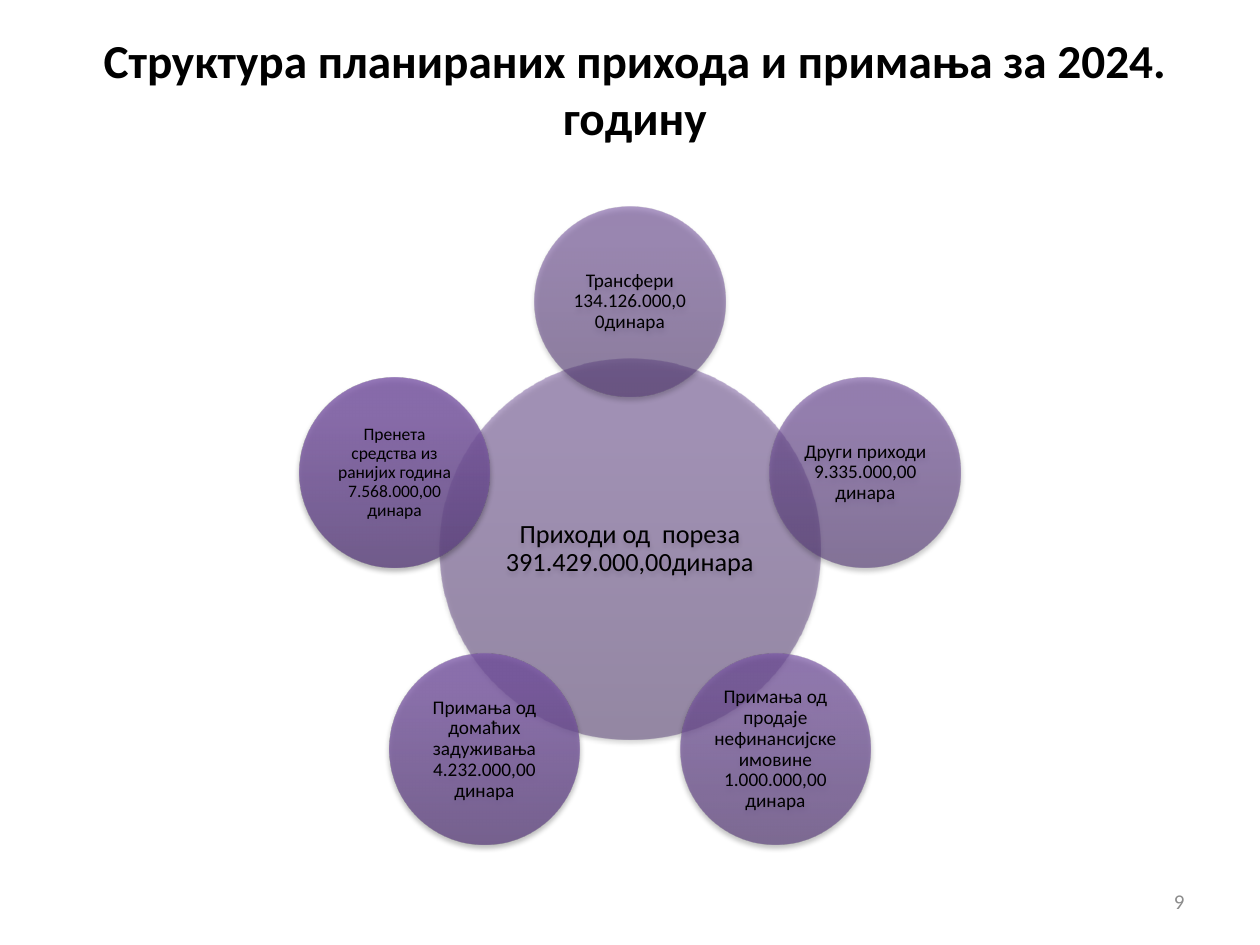
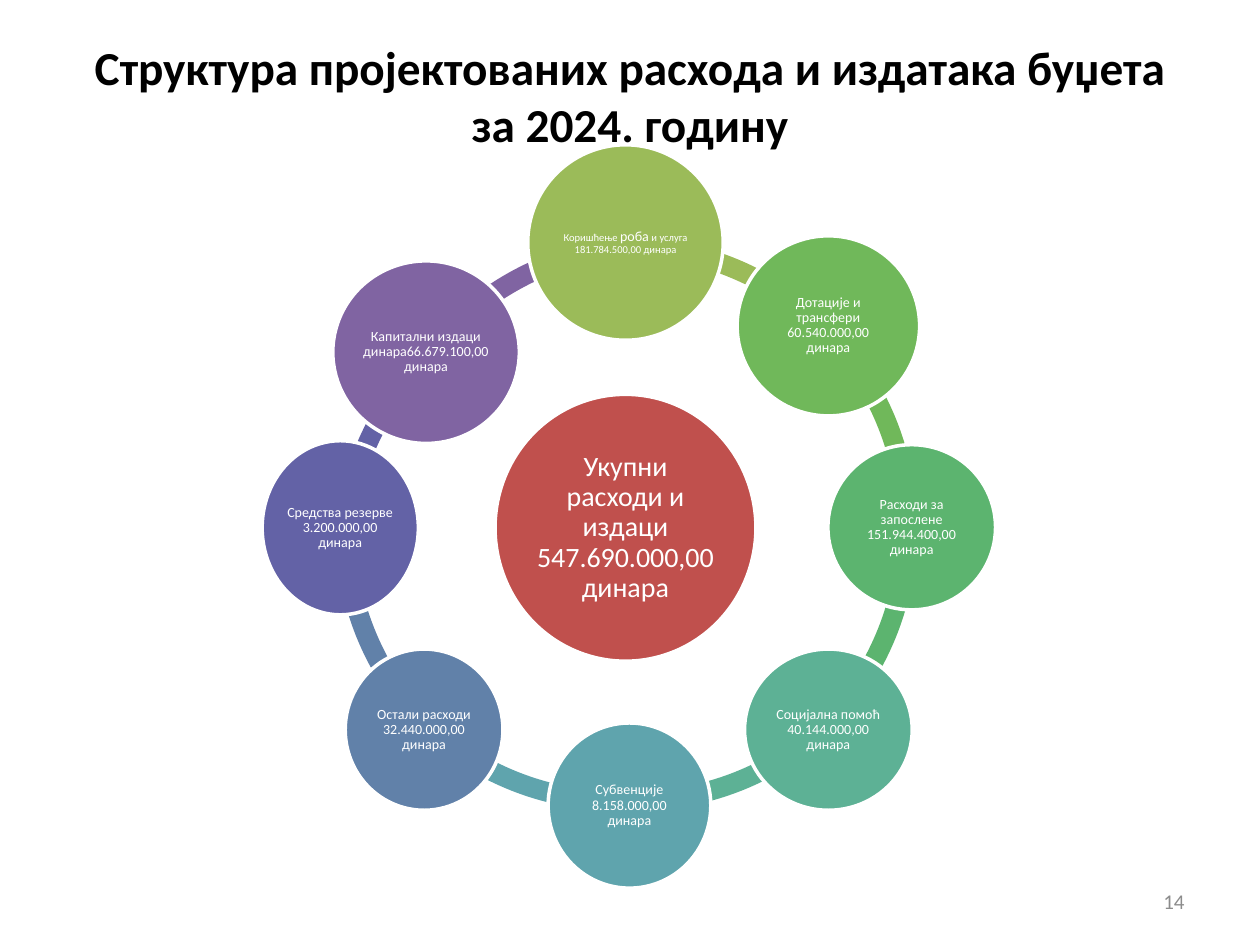
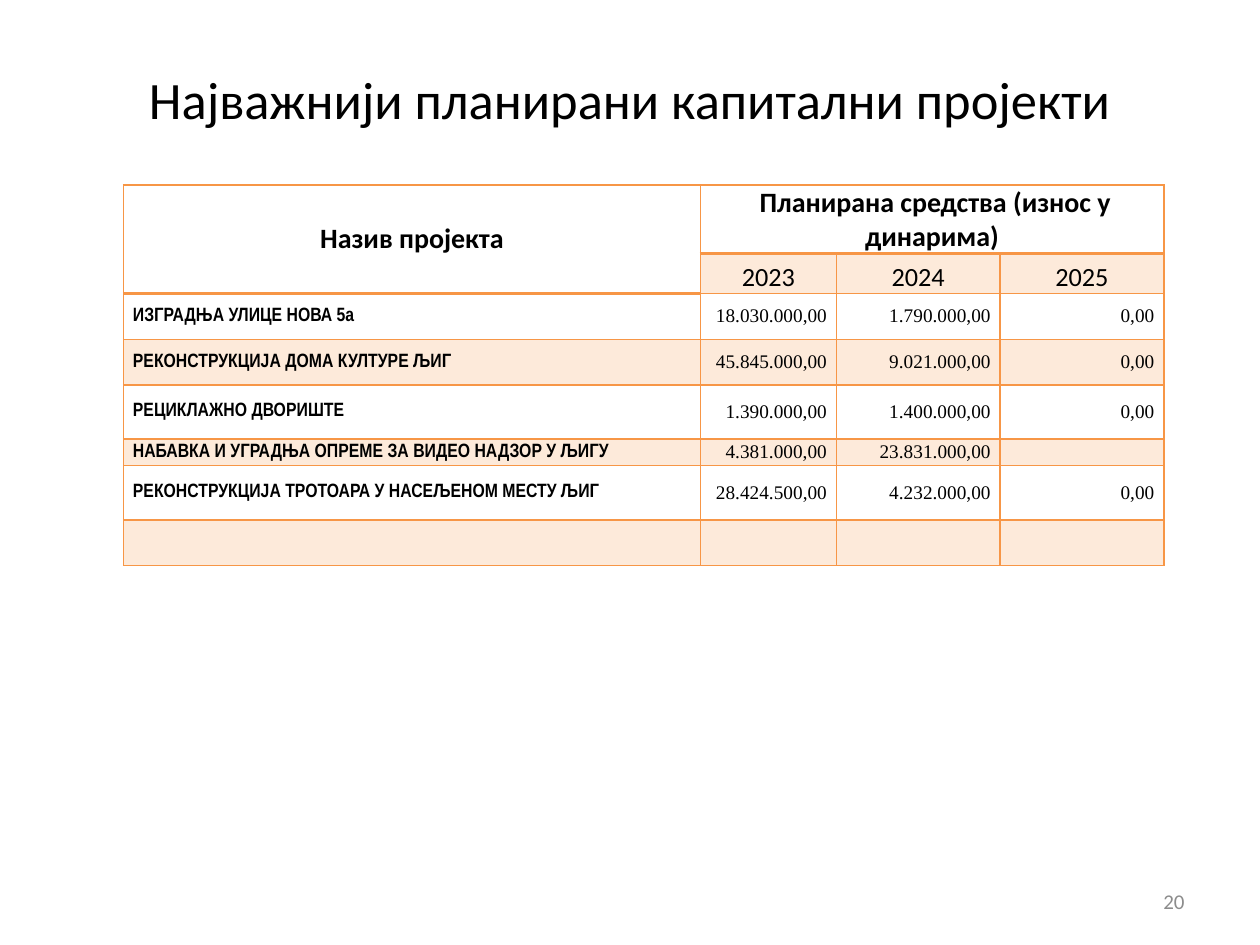
import math
from dataclasses import dataclass
from typing import Any

import pptx
import pptx.dml.color
import pptx.enum.shapes
import pptx.enum.text
import pptx.oxml.ns
import pptx.util
from lxml import etree

Cm = pptx.util.Cm
Pt = pptx.util.Pt
RGB = pptx.dml.color.RGBColor.from_string
qn = pptx.oxml.ns.qn
ALIGN = pptx.enum.text.PP_ALIGN
ANCHOR = pptx.enum.text.MSO_ANCHOR
PRESET = pptx.enum.shapes.MSO_SHAPE


# Shared look
@dataclass(frozen=True)
class Theme:
    font: str = "Calibri"
    project_font: str = "Arial Narrow"
    amount_font: str = "Times New Roman"
    ink: str = "000000"
    paper: str = "FFFFFF"
    page_grey: str = "8C8C8C"
    total_red: str = "C0504D"
    rule_orange: str = "F79646"
    band_orange: str = "FDEADA"
    title_size: float = 27
    plain_title_size: float = 30
    page_size: float = 12
    header_size: float = 16
    year_size: float = 15
    body_size: float = 11


THEME = Theme()


@dataclass(frozen=True)
class TextStyle:
    size: float
    color: str = THEME.ink
    bold: bool = False
    font: str = THEME.font
    align: Any = ALIGN.CENTER


@dataclass(frozen=True)
class Box:
    left: float
    top: float
    width: float
    height: float

    def lengths(self) -> list:
        return [Cm(v) for v in (self.left, self.top, self.width, self.height)]


def centred_box(x: float, y: float, width: float, height: float) -> Box:
    return Box(x - width / 2, y - height / 2, width, height)


@dataclass(frozen=True)
class Income:
    label: str
    size: float
    stops: tuple[str, str, str]
    opacity: int


@dataclass(frozen=True)
class Expense:
    runs: tuple[tuple[str, float], ...]
    color: str
    circle: tuple[float, float, float, float]  # centre x, centre y, width, height
    arc_corner: tuple[float, float]
    arc_angles: tuple[float, float]


# Drawing helpers
def apply_format(target: Any, values: dict[str, Any]) -> None:
    for attribute, value in values.items():
        setattr(target, attribute, value)


def add_xml(parent: Any, tag: str, **attributes: Any) -> Any:
    return etree.SubElement(parent, qn(tag), {k: str(v) for k, v in attributes.items()})


def add_color(parent: Any, color: str, opacity: int = 100) -> None:
    node = add_xml(parent, "a:srgbClr", val=color)
    if opacity < 100:
        add_xml(node, "a:alpha", val=opacity * 1000)


def add_run(paragraph: Any, text: str, style: TextStyle) -> None:
    run = paragraph.add_run()
    run.text = text
    apply_format(run.font, {"name": style.font, "size": Pt(style.size), "bold": style.bold})
    run.font.color.rgb = RGB(style.color)
    paragraph.alignment = style.align


def add_label(slide: Any, box: Box, text: str, style: TextStyle) -> None:
    frame = slide.shapes.add_textbox(*box.lengths()).text_frame
    apply_format(frame, {"word_wrap": True, "vertical_anchor": ANCHOR.MIDDLE})
    add_run(frame.paragraphs[0], text, style)


def add_filled(slide: Any, preset: Any, box: Box, color: str) -> Any:
    shape = slide.shapes.add_shape(preset, *box.lengths())
    shape.shadow.inherit = False
    shape.fill.solid()
    shape.fill.fore_color.rgb = RGB(color)
    shape.line.fill.background()
    return shape


def fill_circle_text(circle: Any, runs: tuple, color: str, inset: float) -> None:
    frame = circle.text_frame
    margins = {f"margin_{side}": Cm(inset) for side in ("left", "top", "right", "bottom")}
    apply_format(frame, {"word_wrap": True, "vertical_anchor": ANCHOR.MIDDLE} | margins)
    frame.paragraphs[0].line_spacing = 0.9
    for text, size in runs:
        add_run(frame.paragraphs[0], text, TextStyle(size, color))


def add_page(deck: Any, title: str, title_box: Box, style: TextStyle, number: str) -> Any:
    slide = deck.slides.add_slide(deck.slide_layouts[6])
    add_label(slide, title_box, title, style)
    add_label(slide, Box(18.21, 17.65, 5.92, 1.02), number,
              TextStyle(THEME.page_size, THEME.page_grey, align=ALIGN.RIGHT))
    return slide


# Slide: income structure
TAX = Income("Приходи од  пореза 391.429.000,00динара", 15, ("563D74", "705097", "704F99"), 50)
OTHER_INCOME = [
    Income("Трансфери 134.126.000,0 0динара", 11, ("583E77", "72519A", "73509C"), 56),
    Income("Други приходи 9.335.000,00 динара", 11, ("5A407A", "75539E", "7551A0"), 62),
    Income("Примања од продаје нефинансијске имовине 1.000.000,00 динара", 11,
           ("5C417C", "7754A1", "7753A4"), 68),
    Income("Примања од домаћих задуживања 4.232.000,00 динара", 11,
           ("5E427E", "7956A4", "7A55A6"), 74),
    Income("Пренета средства из ранијих година 7.568.000,00 динара", 10,
           ("5F4580", "7C59A6", "7C58A8"), 80),
]


def add_income_circle(slide: Any, income: Income, x: float, y: float, diameter: float) -> None:
    box = centred_box(x, y, diameter, diameter)
    circle = add_filled(slide, PRESET.OVAL, box, income.stops[0])
    properties = circle._element.spPr

    # Translucent gradient, running upwards
    gradient = etree.Element(qn("a:gradFill"), rotWithShape="1")
    stops = add_xml(gradient, "a:gsLst")
    for position, color in zip((0, 80, 100), income.stops):
        add_color(add_xml(stops, "a:gs", pos=position * 1000), color, income.opacity)
    add_xml(gradient, "a:lin", ang=270 * 60000, scaled=0)
    properties.replace(properties.find(qn("a:solidFill")), gradient)

    # Soft shadow below
    shadow = add_xml(properties.find(qn("a:effectLst")), "a:outerShdw", blurRad=Pt(3.1),
                     dist=Pt(1.8), dir=90 * 60000, rotWithShape=0)
    add_color(shadow, THEME.ink, 35)
    fill_circle_text(circle, ((income.label, income.size),), THEME.ink, 0.04)


def build_income(deck: Any) -> None:
    slide = add_page(deck, "Структура планираних прихода и примања за 2024. годину",
                     Box(1.37, 0.69, 22.86, 2.16), TextStyle(THEME.title_size, bold=True), "9")
    hub_x, hub_y, orbit = 12.7, 11.07, 4.99
    add_income_circle(slide, TAX, hub_x, hub_y, 7.67)
    for index, income in enumerate(OTHER_INCOME):
        angle = math.radians(index * 360 / len(OTHER_INCOME) - 90)
        add_income_circle(slide, income, hub_x + orbit * math.cos(angle),
                          hub_y + orbit * math.sin(angle), 3.84)


# Slide: expense structure
TOTAL_RUNS = (("Укупни расходи и издаци 547.690.000,00 динара", 16),)
ARC_DIAMETER = 11.73
ARC_THICKNESS = 0.034
EXPENSES = [
    Expense((("Коришћење ", 6), ("роба", 8), (" и услуга 181.784.500,00 динара", 6)),
            "9BBB59", (12.61, 4.89, 3.94, 3.94), (6.76, 4.78), (270, 315)),
    Expense((("Дотације и трансфери 60.540.000,00 динара", 8),),
            "70B85A", (16.7, 6.57, 3.68, 3.63), (6.76, 4.78), (315, 0)),
    Expense((("Расходи за запослене 151.944.400,00 динара", 8),),
            "5CB46F", (18.38, 10.63, 3.38, 3.33), (6.76, 4.78), (0, 45)),
    Expense((("Социјална помоћ 40.144.000,00 динара", 8),),
            "5DB195", (16.7, 14.71, 3.38, 3.25), (6.93, 4.62), (47.23, 91)),
    Expense((("Субвенције 8.158.000,00 динара", 8),),
            "5FA4AD", (12.69, 16.24, 3.28, 3.33), (6.6, 4.62), (87.83, 132.82)),
    Expense((("Остали расходи 32.440.000,00 динара", 8),),
            "6181A9", (8.55, 14.71, 3.18, 3.25), (6.76, 4.78), (135, 180)),
    Expense((("Средства резерве 3.200.000,00 динара", 8),),
            "6362A6", (6.86, 10.64, 3.15, 3.51), (6.73, 5.36), (185.81, 225.94)),
    Expense((("Капитални издаци динара66.679.100,00 динара", 8),),
            "8064A2", (8.59, 7.1, 3.76, 3.68), (7.26, 4.75), (217.83, 264.88)),
]


def add_expense_circle(slide: Any, runs: tuple, color: str, circle_at: tuple,
                       inset: float) -> None:
    circle = add_filled(slide, PRESET.OVAL, centred_box(*circle_at), color)
    circle.line.color.rgb = RGB(THEME.paper)
    circle.line.width = Pt(2)
    fill_circle_text(circle, runs, THEME.paper, inset)


def build_expenses(deck: Any) -> None:
    slide = add_page(deck, "Структура пројектованих расхода и издатака буџета за 2024. годину",
                     Box(1.27, 0.74, 22.86, 2.36), TextStyle(THEME.title_size, bold=True), "14")
    for expense in reversed(EXPENSES):
        box = Box(*expense.arc_corner, ARC_DIAMETER, ARC_DIAMETER)
        arc = add_filled(slide, PRESET.BLOCK_ARC, box, expense.color)
        # One degree is 60000 units, and adjustments count in 100000
        for index, angle in enumerate(expense.arc_angles):
            arc.adjustments[index] = angle * 0.6
        arc.adjustments[2] = ARC_THICKNESS
    add_expense_circle(slide, TOTAL_RUNS, THEME.total_red, (12.61, 10.64, 5.26, 5.38), 0.05)
    for expense in EXPENSES:
        add_expense_circle(slide, expense.runs, expense.color, expense.circle, 0.03)


# Slide: capital projects
COLUMN_WIDTHS = (11.63, 2.74, 3.3, 3.3)
ROW_HEIGHTS = (1.39, 0.8, 0.92, 0.92, 1.09, 0.54, 1.09, 0.92)
PROJECT_ROWS = [
    ("Назив пројекта", " Планирана средства (износ у динарима)", "", ""),
    ("", "2023", "2024", "2025"),
    ("ИЗГРАДЊА УЛИЦЕ НОВА 5а", "18.030.000,00", "1.790.000,00", "0,00"),
    ("РЕКОНСТРУКЦИЈА ДОМА КУЛТУРЕ ЉИГ", "45.845.000,00", "9.021.000,00", "0,00"),
    ("РЕЦИКЛАЖНО ДВОРИШТЕ", "1.390.000,00", "1.400.000,00", "0,00"),
    ("НАБАВКА И УГРАДЊА ОПРЕМЕ ЗА ВИДЕО НАДЗОР У ЉИГУ", "4.381.000,00", "23.831.000,00", ""),
    ("РЕКОНСТРУКЦИЈА ТРОТОАРА У НАСЕЉЕНОМ МЕСТУ ЉИГ", "28.424.500,00", "4.232.000,00", "0,00"),
    ("", "", "", ""),
]
HEADER_STYLE = TextStyle(THEME.header_size, bold=True)
YEAR_STYLE = TextStyle(THEME.year_size)
PROJECT_STYLE = TextStyle(THEME.body_size, bold=True, font=THEME.project_font, align=ALIGN.LEFT)
AMOUNT_STYLE = TextStyle(THEME.body_size, font=THEME.amount_font, align=ALIGN.RIGHT)


def cell_style(row: int, column: int) -> TextStyle:
    if row < 2:
        return YEAR_STYLE if row else HEADER_STYLE
    return AMOUNT_STYLE if column else PROJECT_STYLE


def add_cell_borders(cell: Any, bottom_width: float) -> None:
    properties = cell._tc.get_or_add_tcPr()
    for side, width in {"L": 1, "R": 1, "T": 1, "B": bottom_width}.items():
        line = add_xml(properties, f"a:ln{side}", w=Pt(width))
        add_color(add_xml(line, "a:solidFill"), THEME.rule_orange)


def fill_cell(cell: Any, text: str, row: int, column: int) -> None:
    in_name_header = row < 2 and column == 0
    low = row < 2 and column > 0
    apply_format(cell, {"margin_left": Cm(0.19), "margin_right": Cm(0.19), "margin_top": 0,
                        "margin_bottom": 0,
                        "vertical_anchor": ANCHOR.BOTTOM if low else ANCHOR.MIDDLE})
    add_cell_borders(cell, 2 if row == 0 or in_name_header else 1)
    if row % 2 and not in_name_header:
        cell.fill.solid()
        cell.fill.fore_color.rgb = RGB(THEME.band_orange)
    else:
        cell.fill.background()
    paragraph = cell.text_frame.paragraphs[0]
    if text:
        add_run(paragraph, text, cell_style(row, column))
    else:
        # Keeps empty cells from stretching their row
        add_xml(paragraph._p, "a:endParaRPr", sz=int(THEME.body_size * 100))


def build_projects(deck: Any) -> None:
    slide = add_page(deck, "Најважнији планирани капитални пројекти",
                     Box(1.27, 0.76, 22.86, 2.44), TextStyle(THEME.plain_title_size), "20")
    box = Box(2.49, 3.73, sum(COLUMN_WIDTHS), sum(ROW_HEIGHTS))
    projects = slide.shapes.add_table(len(ROW_HEIGHTS), len(COLUMN_WIDTHS), *box.lengths()).table
    apply_format(projects, {"first_row": False, "horz_banding": False})
    for column, width in zip(projects.columns, COLUMN_WIDTHS):
        column.width = Cm(width)
    for row, height in zip(projects.rows, ROW_HEIGHTS):
        row.height = Cm(height)
    projects.cell(0, 0).merge(projects.cell(1, 0))
    projects.cell(0, 1).merge(projects.cell(0, 3))
    for row, texts in enumerate(PROJECT_ROWS):
        for column, text in enumerate(texts):
            fill_cell(projects.cell(row, column), text, row, column)


def main() -> None:
    deck = pptx.Presentation()
    apply_format(deck, {"slide_width": Cm(25.4), "slide_height": Cm(19.05)})
    build_income(deck)
    build_expenses(deck)
    build_projects(deck)
    deck.save("out.pptx")


if __name__ == "__main__":
    main()
